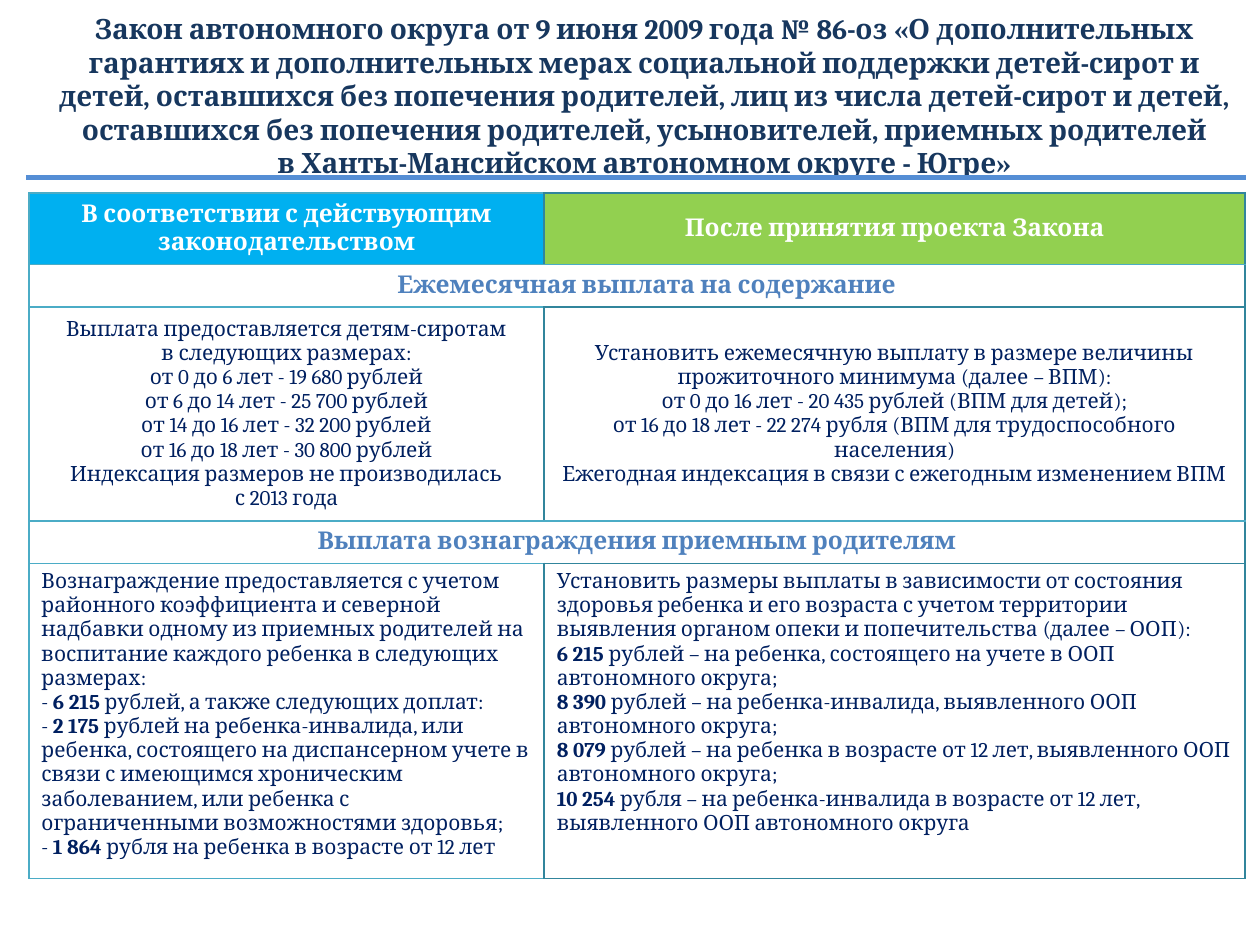
from dataclasses import dataclass
from typing import Optional

from lxml.etree import SubElement
from pptx import Presentation
from pptx.dml.color import RGBColor as Rgb
from pptx.enum.text import MSO_ANCHOR as Anchor, PP_ALIGN as Align
from pptx.enum.shapes import MSO_CONNECTOR as Connector
from pptx.oxml.ns import qn
from pptx.util import Pt

COLORS = {
    "title": "17375E", "rule": "558ED5", "blue": "00B0F0", "green": "92D050",
    "white": "FFFFFF", "section": "4F81BD", "body": "002060",
    "teal": "4BACC6", "dark_teal": "31859C",
}
FONT = "Cambria"
PLAIN_STYLE = "{2D5ABB26-0587-4C30-8999-92F81FD0307C}"


@dataclass
class TextStyle:
    size: float
    color: str
    bold: bool = False
    align: Align = Align.CENTER


@dataclass
class Cell:
    """Table cell; asterisks in the text enclose bold amounts."""
    lines: list[str]
    style: TextStyle
    borders: dict[str, str]
    fill: str = "white"
    anchor: Anchor = Anchor.MIDDLE
    left_margin: float = 7.2


@dataclass
class Row:
    height: float
    left: Cell
    right: Optional[Cell] = None  # None: the left cell spans both columns


HEADER = TextStyle(14, "white", bold=True)
SECTION = TextStyle(14, "section", bold=True)
CENTERED = TextStyle(12, "body")
LISTED = TextStyle(12, "body", align=Align.LEFT)

DARK_BOX = dict.fromkeys("LRTB", "dark_teal")
HEADER_EDGES = {"L": "teal", "R": "dark_teal", "T": "teal", "B": "teal"}
LEFT_EDGES = {"L": "teal", "R": "dark_teal", "B": "teal"}
SECTION_EDGES = {"L": "teal", "R": "dark_teal", "T": "teal"}

TITLE = [
    "Закон автономного округа от 9 июня 2009 года № 86-оз «О дополнительных",
    "гарантиях и дополнительных мерах социальной поддержки детей-сирот и детей, "
    "оставшихся без попечения родителей, лиц из числа детей-сирот и детей,",
    "оставшихся без попечения родителей, усыновителей, приемных родителей",
    "в Ханты-Мансийском автономном округе - Югре»",
]
COLUMNS = [294.5, 400.5]
ROWS = [
    Row(40.8,
        Cell(["В соответствии с действующим законодательством"],
             HEADER, HEADER_EDGES, "blue"),
        Cell(["После принятия проекта Закона"], HEADER, DARK_BOX, "green")),
    Row(24.2, Cell(["Ежемесячная выплата на содержание"],
                   SECTION, SECTION_EDGES, left_margin=18.5)),
    Row(122.2,
        Cell(["Выплата предоставляется детям-сиротам\vв следующих размерах:",
              "от 0 до 6 лет - 19 680 рублей",
              "от 6 до 14 лет - 25 700 рублей",
              "от 14 до 16 лет - 32 200 рублей",
              "от 16 до 18 лет - 30 800 рублей",
              "Индексация размеров не производилась",
              "с 2013 года"], CENTERED, LEFT_EDGES),
        Cell(["Установить ежемесячную выплату в размере величины "
              "прожиточного минимума (далее – ВПМ):",
              "от 0 до 16 лет - 20 435 рублей (ВПМ для детей);",
              "от 16 до 18 лет - 22 274 рубля (ВПМ для трудоспособного населения)",
              "Ежегодная индексация в связи с ежегодным изменением ВПМ"],
             CENTERED, DARK_BOX)),
    Row(24.2, Cell(["Выплата вознаграждения приемным родителям"],
                   SECTION, SECTION_EDGES, anchor=Anchor.TOP)),
    Row(180,
        Cell(["Вознаграждение предоставляется с учетом районного коэффициента и "
              "северной надбавки одному из приемных родителей на воспитание "
              "каждого ребенка в следующих размерах:",
              "- *6 215* рублей, а также следующих доплат:",
              "- *2 175* рублей на ребенка-инвалида, или ребенка, состоящего на "
              "диспансерном учете в связи с имеющимся хроническим заболеванием, "
              "или ребенка с ограниченными возможностями здоровья;",
              "- *1 864* рубля на ребенка в возрасте от 12 лет"],
             LISTED, LEFT_EDGES, anchor=Anchor.TOP),
        Cell(["Установить размеры выплаты в зависимости от состояния здоровья "
              "ребенка и его возраста с учетом территории выявления органом "
              "опеки и попечительства (далее – ООП):",
              "*6 215* рублей – на ребенка, состоящего на учете в ООП "
              "автономного округа;",
              "*8 390* рублей – на ребенка-инвалида, выявленного ООП "
              "автономного округа;",
              "*8 079* рублей – на ребенка в возрасте от 12 лет, выявленного ООП "
              "автономного округа;",
              "*10 254* рубля – на ребенка-инвалида в возрасте от 12 лет, "
              "выявленного ООП автономного округа"],
             LISTED, DARK_BOX, anchor=Anchor.TOP)),
]


def color(name: str) -> Rgb:
    return Rgb.from_string(COLORS[name])


def write_lines(frame, lines: list[str], style: TextStyle) -> None:
    for index, line in enumerate(lines):
        paragraph = frame.paragraphs[0] if index == 0 else frame.add_paragraph()
        paragraph.alignment = style.align
        font = paragraph.font
        font.name, font.size, font.bold = FONT, Pt(style.size), style.bold
        font.color.rgb = color(style.color)
        parts = line.split("*")
        if len(parts) == 1:
            paragraph.text = line
            continue
        for position, part in enumerate(parts):
            if part:
                run = paragraph.add_run()
                run.text = part
                if position % 2:
                    run.font.bold = True


def draw_rule(slide, left: float, right: float, top: float) -> None:
    rule = slide.shapes.add_connector(
        Connector.STRAIGHT, Pt(left), Pt(top), Pt(right), Pt(top))
    rule.line.color.rgb = color("rule")
    rule.line.width = Pt(3)
    SubElement(rule._element.spPr, qn("a:effectLst"))


def set_borders(cell, borders: dict[str, str]) -> None:
    properties = cell._tc.get_or_add_tcPr()
    for edge, name in borders.items():
        line = SubElement(properties, qn(f"a:ln{edge}"), w=str(Pt(1)))
        fill = SubElement(line, qn("a:solidFill"))
        SubElement(fill, qn("a:srgbClr"), val=COLORS[name])


def fill_cell(cell, content: Cell) -> None:
    set_borders(cell, content.borders)
    cell.fill.solid()
    cell.fill.fore_color.rgb = color(content.fill)
    cell.vertical_anchor = content.anchor
    cell.margin_left = Pt(content.left_margin)
    write_lines(cell.text_frame, content.lines, content.style)


def draw_table(slide, left: float, top: float, rows: list[Row]) -> None:
    frame = slide.shapes.add_table(
        len(rows), len(COLUMNS), Pt(left), Pt(top),
        Pt(sum(COLUMNS)), Pt(sum(row.height for row in rows)))
    table = frame.table
    table.first_row = table.horz_banding = False
    table._tbl.tblPr.find(qn("a:tableStyleId")).text = PLAIN_STYLE
    for column, width in zip(table.columns, COLUMNS):
        column.width = Pt(width)
    for index, row in enumerate(rows):
        table.rows[index].height = Pt(row.height)
        first, second = table.cell(index, 0), table.cell(index, 1)
        if row.right is None:
            first.merge(second)
        else:
            fill_cell(second, row.right)
        fill_cell(first, row.left)


def main() -> None:
    presentation = Presentation()
    presentation.slide_width, presentation.slide_height = Pt(720), Pt(540)
    slide = presentation.slides.add_slide(presentation.slide_layouts[6])

    # Title
    title = slide.shapes.add_textbox(Pt(16.5), Pt(3), Pt(704), Pt(103))
    title.text_frame.word_wrap = True
    write_lines(title.text_frame, TITLE, TextStyle(16, "title", bold=True))

    # Comparison table between the two rules
    draw_rule(slide, 21, 707, 111)
    draw_table(slide, 16.5, 110.3, ROWS)
    draw_rule(slide, 15, 712, 101.5)

    presentation.save("out.pptx")


if __name__ == "__main__":
    main()
